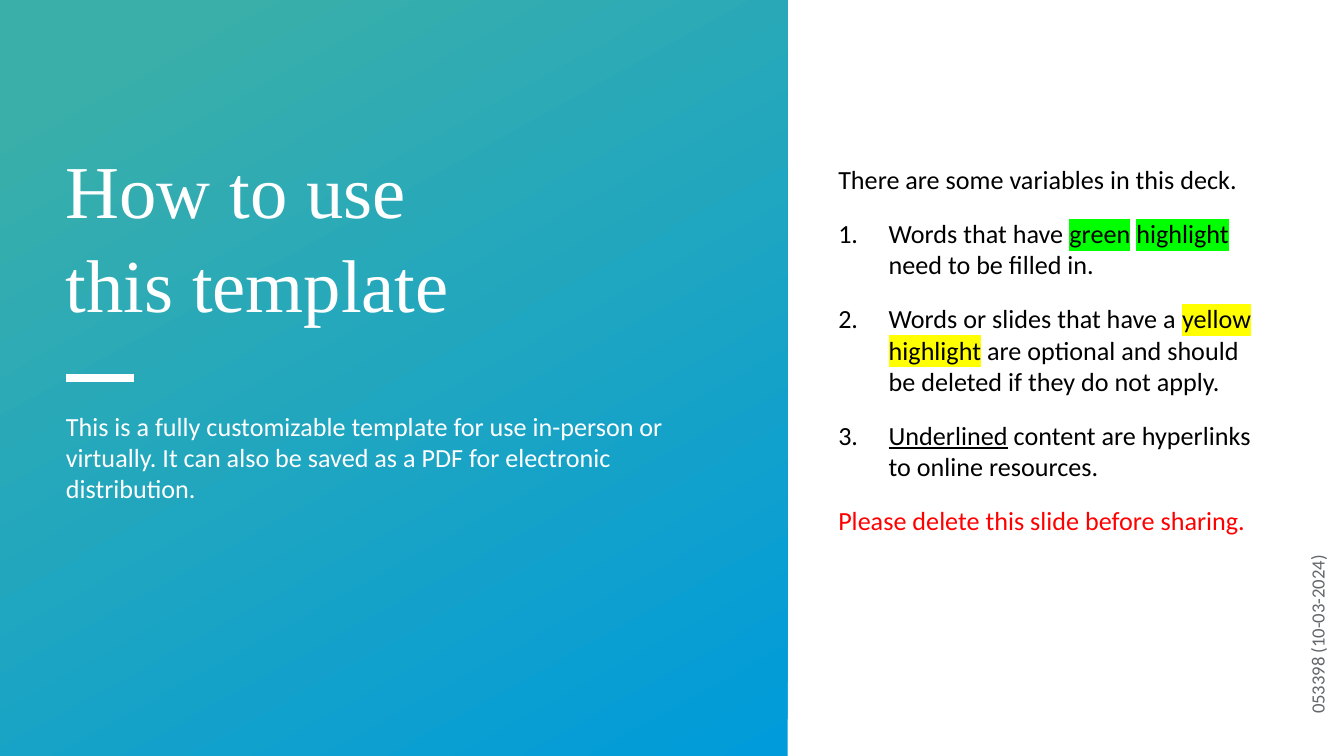
from lxml import etree
from pptx import Presentation
from pptx.dml.color import RGBColor
from pptx.enum.shapes import MSO_CONNECTOR, MSO_SHAPE
from pptx.enum.text import MSO_ANCHOR, MSO_AUTO_SIZE, PP_ALIGN
from pptx.oxml.ns import qn
from pptx.util import Pt

STRAIGHT = MSO_CONNECTOR.STRAIGHT
RECTANGLE = MSO_SHAPE.RECTANGLE
TOP, BOTTOM = MSO_ANCHOR.TOP, MSO_ANCHOR.BOTTOM
GROW = MSO_AUTO_SIZE.SHAPE_TO_FIT_TEXT
LEFT = PP_ALIGN.LEFT

TITLE_ONLY = 5
SERIF, SANS = "Times New Roman", "Calibri"
COLORS = {
    "blue": "009BDB", "teal": "3AAFA9", "white": "FFFFFF", "black": "000000",
    "gray": "63666A", "red": "FF0000", "green": "00FF00", "yellow": "FFFF00",
}
SLIDE_WIDTH, SLIDE_HEIGHT = 720, 405
PANEL_WIDTH = 422
MARGIN = 35.3

INTRO = ("This is a fully customizable template for use in-person or virtually. "
         "It can also be saved as a PDF for electronic distribution.")
# Each step is a list of runs: text and run formatting.
STEPS = [
    [("Words that have ", {}), ("green", {"highlight": "green"}), (" ", {}),
     ("highlight", {"highlight": "green"}), (" need to be filled in.", {})],
    [("Words or slides that have a ", {}),
     ("yellow highlight", {"highlight": "yellow"}),
     (" are optional and should be deleted if they do not apply.", {})],
    [("Underlined", {"underline": True}),
     (" content are hyperlinks to online resources.", {})],
]


def rgb(color):
    return RGBColor.from_string(COLORS[color])


def add_run(paragraph, text, size, color, font=SANS, highlight=None, underline=None):
    run = paragraph.add_run()
    run.text = text
    run.font.size = Pt(size)
    run.font.color.rgb = rgb(color)
    run.font.underline = underline
    if highlight:
        marker = etree.SubElement(run.font._element, qn("a:highlight"))
        etree.SubElement(marker, qn("a:srgbClr"), val=COLORS[highlight])
    run.font.name = font


def set_frame(frame, inset=None, anchor=TOP):
    frame.word_wrap = True
    frame.auto_size = GROW
    frame.vertical_anchor = anchor
    if inset is not None:
        frame.margin_left = frame.margin_right = Pt(inset)
        frame.margin_top = frame.margin_bottom = Pt(inset)


def add_text_box(slide, left, top, width, height, inset=None):
    box = slide.shapes.add_textbox(Pt(left), Pt(top), Pt(width), Pt(height))
    set_frame(box.text_frame, inset)
    return box


def number_paragraph(paragraph, indent=27):
    properties = paragraph._p.get_or_add_pPr()
    properties.set("marL", str(Pt(indent)))
    properties.set("indent", str(-Pt(indent)))
    etree.SubElement(properties, qn("a:buFont"), typeface="+mj-lt")
    etree.SubElement(properties, qn("a:buAutoNum"), type="arabicPeriod")


def add_gradient_panel(slide):
    panel = slide.shapes.add_shape(RECTANGLE, 0, 0, Pt(PANEL_WIDTH), Pt(SLIDE_HEIGHT))
    panel.shadow.inherit = False
    panel.line.fill.background()
    panel.fill.gradient()
    panel.fill.gradient_angle = 119
    stops = panel.fill.gradient_stops
    for stop, position, color in zip(stops, (0, 0.9), ("blue", "teal")):
        stop.position = position
        stop.color.rgb = rgb(color)
    slide.shapes.title.element.addprevious(panel.element)


def add_title(slide):
    title = slide.shapes.title
    title.left, title.top = Pt(MARGIN), Pt(78.5)
    title.width, title.height = Pt(341), Pt(97.2)
    set_frame(title.text_frame, 0, BOTTOM)
    paragraph = title.text_frame.paragraphs[0]
    paragraph.alignment = LEFT
    paragraph.line_spacing = 1.05
    add_run(paragraph, "How to use", 40, "white", SERIF)
    paragraph.add_line_break()
    add_run(paragraph, "this template", 40, "white", SERIF)


def add_accent_rule(slide):
    y = Pt(202.4)
    rule = slide.shapes.add_connector(STRAIGHT, Pt(MARGIN), y, Pt(72), y)
    rule.line.color.rgb = rgb("white")
    rule.line.width = Pt(4)
    etree.SubElement(rule._element.spPr, qn("a:effectLst"))


def add_intro(slide):
    box = add_text_box(slide, MARGIN, 219.6, 321, 51, inset=0)
    add_run(box.text_frame.paragraphs[0], INTRO, 14, "white")


def add_document_number(slide):
    box = add_text_box(slide, 647.3, 323.3, 110.2, 22.3)
    box.rotation = 270
    paragraph = box.text_frame.paragraphs[0]
    paragraph.line_spacing = 1.4
    add_run(paragraph, "053398 (10-03-2024)", 10, "gray")


def add_instructions(slide):
    frame = add_text_box(slide, 442, 84.2, 244.8, 208).text_frame
    opening = frame.paragraphs[0]
    add_run(opening, "There are some variables in this deck.", 14, "black")
    for step in STEPS:
        paragraph = frame.add_paragraph()
        number_paragraph(paragraph)
        for text, formatting in step:
            add_run(paragraph, text, 14, "black", **formatting)
    add_run(frame.add_paragraph(), "Please delete this slide before sharing.", 14, "red")
    for paragraph in frame.paragraphs:
        paragraph.space_after = Pt(12)


def main():
    deck = Presentation()
    deck.slide_width, deck.slide_height = Pt(SLIDE_WIDTH), Pt(SLIDE_HEIGHT)
    slide = deck.slides.add_slide(deck.slide_layouts[TITLE_ONLY])
    add_gradient_panel(slide)
    add_title(slide)
    add_intro(slide)
    add_accent_rule(slide)
    add_document_number(slide)
    add_instructions(slide)
    deck.save("out.pptx")


if __name__ == "__main__":
    main()
